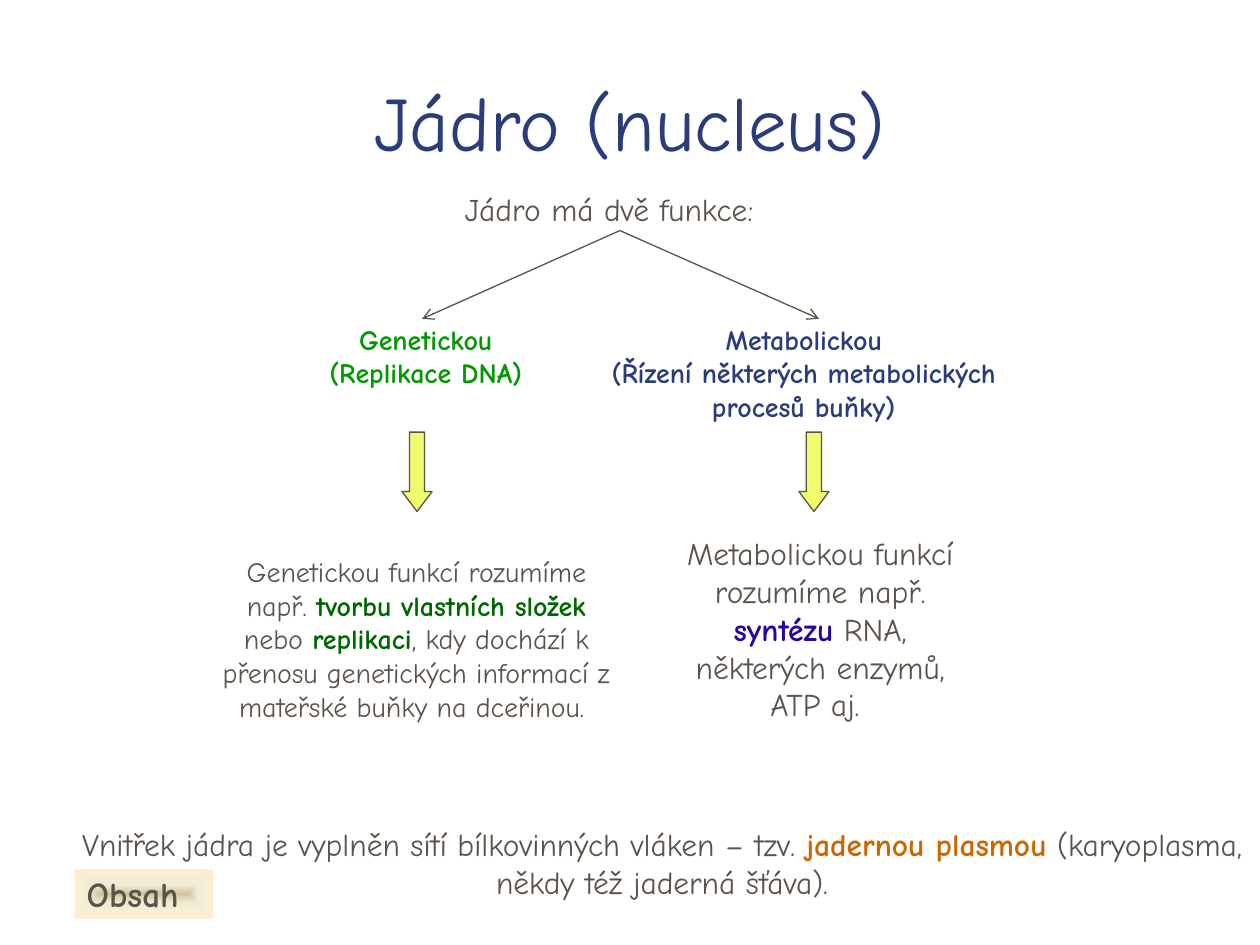
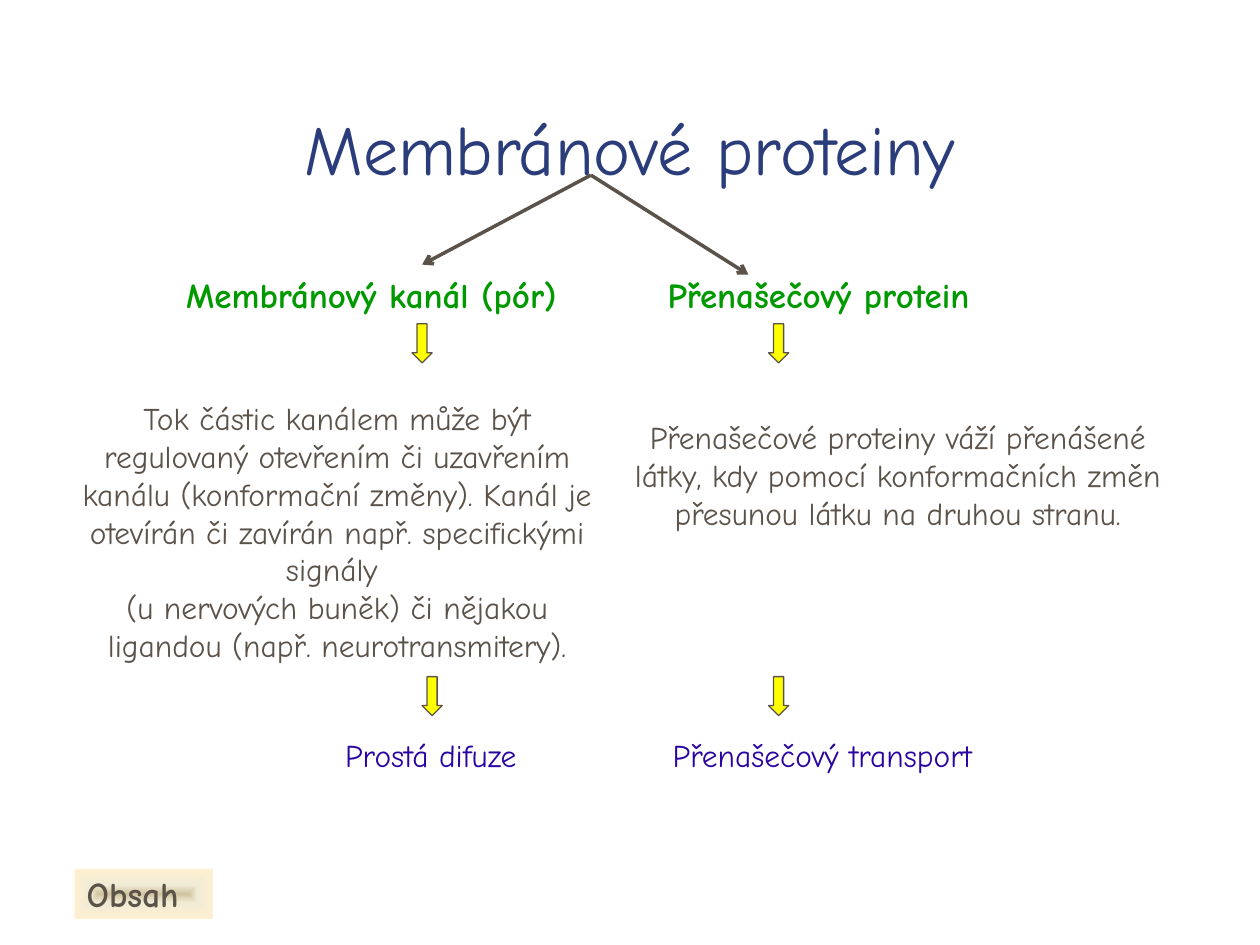
"""Build two biology slides: the cell nucleus and the membrane proteins."""
from dataclasses import dataclass
from typing import NamedTuple

from lxml import etree
from pptx import Presentation
from pptx.dml.color import RGBColor
from pptx.enum import shapes, text
from pptx.oxml import ns, parse_xml
from pptx.util import Inches, Pt


@dataclass(frozen=True)
class Theme:
    font: str = "Comic Neue"
    body: str = "5B5249"
    navy: str = "2A3D7A"
    green: str = "009900"
    dark_green: str = "006600"
    violet: str = "2904A0"
    orange: str = "CC6600"
    lime: str = "EEFC6E"
    yellow: str = "FFFF00"
    white: str = "FFFFFF"
    button_stops: tuple = ((0, "D1C39F"), (35, "F0EBD5"), (100, "FFEFD1"))
    small: int = 16
    normal: int = 18
    heading: int = 20
    title: int = 40
    big_title: int = 44
    thin: float = 0.75
    thick: float = 2


class Box(NamedTuple):
    left: float
    top: float
    width: float
    height: float


class Point(NamedTuple):
    x: float
    y: float


class Run(NamedTuple):
    text: str
    color: str = ""
    bold: bool = False


class ArrowStyle(NamedTuple):
    width: float
    height: float
    head: float
    fill: str


T = Theme()
CENTER = text.PP_ALIGN.CENTER
LEFT = text.PP_ALIGN.LEFT
TOP = text.MSO_ANCHOR.TOP
MIDDLE = text.MSO_ANCHOR.MIDDLE
BOTTOM = text.MSO_ANCHOR.BOTTOM
NUCLEUS_ARROW = ArrowStyle(0.24, 0.63, 0.66, T.lime)
PROTEIN_ARROW = ArrowStyle(0.16, 0.31, 0.5, T.yellow)


def rgb(color: str) -> RGBColor:
    """Turn a hex string into a colour."""
    return RGBColor.from_string(color)


def write(sp, paragraphs, *, size=T.normal, color=T.body, bold=False,
          align=CENTER, anchor=TOP, wrap=True, grow=True) -> None:
    """Fill a shape with paragraphs, each a string or a list of runs."""
    tf = sp.text_frame
    tf.word_wrap = wrap
    tf.vertical_anchor = anchor
    fit = text.MSO_AUTO_SIZE
    tf.auto_size = fit.SHAPE_TO_FIT_TEXT if grow else fit.NONE
    for i, runs in enumerate(paragraphs):
        p = tf.paragraphs[0] if i == 0 else tf.add_paragraph()
        p.alignment = align
        for run in [Run(runs)] if isinstance(runs, str) else runs:
            r = p.add_run()
            r.text = run.text
            r.font.name = T.font
            r.font.size = Pt(size)
            r.font.bold = bold or run.bold
            r.font.color.rgb = rgb(run.color or color)


def add_text(slide, box: Box, *paragraphs, **fmt):
    """Add a text box with formatted paragraphs."""
    sp = slide.shapes.add_textbox(*map(Inches, box))
    write(sp, paragraphs, **fmt)
    return sp


def add_title(slide, box: Box, title: str, size: int) -> None:
    """Add the slide title."""
    add_text(slide, box, title, size=size, color=T.navy, anchor=BOTTOM, grow=False)


def add_branches(slide, apex: Point, ends, weight: float) -> None:
    """Draw arrows from one apex to several ends."""
    for end in ends:
        line = slide.shapes.add_connector(
            shapes.MSO_CONNECTOR.STRAIGHT, *map(Inches, (*apex, *end)))
        line.line.color.rgb = rgb(T.body)
        line.line.width = Pt(weight)
        etree.SubElement(line.line._get_or_add_ln(), ns.qn("a:tailEnd"), type="arrow")
        etree.SubElement(line._element.spPr, ns.qn("a:effectLst"))


def add_down_arrow(slide, at: Point, style: ArrowStyle) -> None:
    """Draw a block arrow pointing down."""
    sp = slide.shapes.add_shape(shapes.MSO_SHAPE.DOWN_ARROW,
                                *map(Inches, (*at, style.width, style.height)))
    sp.adjustments[1] = style.head
    sp.shadow.inherit = False
    sp.fill.solid()
    sp.fill.fore_color.rgb = rgb(style.fill)
    sp.line.color.rgb = rgb(T.body)
    sp.line.width = Pt(T.thin)


def add_contents_button(slide) -> None:
    """Draw the contents button with its rectangular gradient."""
    sp = slide.shapes.add_shape(shapes.MSO_SHAPE.ACTION_BUTTON_CUSTOM,
                                *map(Inches, Box(0.59, 6.9, 1.1, 0.39)))
    sp.shadow.inherit = False
    sp.line.fill.background()
    sp.fill.solid()
    stops = "".join(f'<a:gs pos="{pos * 1000}"><a:srgbClr val="{color}"/></a:gs>'
                    for pos, color in T.button_stops)
    gradient = parse_xml(
        f'<a:gradFill {ns.nsdecls("a")} rotWithShape="1"><a:gsLst>{stops}</a:gsLst>'
        '<a:path path="rect"><a:fillToRect l="50000" t="50000" r="50000" b="50000"/>'
        '</a:path></a:gradFill>')
    spPr = sp._element.spPr
    spPr.replace(spPr.find(ns.qn("a:solidFill")), gradient)
    write(sp, ["Obsah"], size=T.heading, bold=True, align=LEFT,
          anchor=MIDDLE, wrap=False, grow=False)


def build_nucleus(slide) -> None:
    """Build the slide on the nucleus and its two functions."""
    note = add_text(slide, Box(0.51, 6.5, 9.49, 0.7), [
        Run("Vnitřek jádra je vyplněn sítí bílkovinných vláken – tzv. "),
        Run("jadernou plasmou", T.orange, True),
        Run(" (karyoplasma, někdy též jaderná šťáva).")])
    note.fill.solid()
    note.fill.fore_color.rgb = rgb(T.white)
    white = note._element.spPr.find(ns.qn("a:solidFill"))[0]
    etree.SubElement(white, ns.qn("a:alpha"), val="50000")

    add_title(slide, Box(0.75, 0.44, 8.5, 0.93), "Jádro (nucleus)", T.big_title)
    add_text(slide, Box(3.59, 1.46, 2.71, 0.4), "Jádro má dvě funkce:",
             align=LEFT, wrap=False)
    add_branches(slide, Point(4.92, 1.83), [Point(3.35, 2.53), Point(6.5, 2.53)], T.thin)
    add_text(slide, Box(2.4, 2.51, 1.96, 0.64), "Genetickou", "(Replikace DNA)",
             size=T.small, color=T.green, bold=True, wrap=False)
    add_text(slide, Box(4.53, 2.51, 3.7, 0.9), "Metabolickou",
             "(Řízení některých metabolických procesů buňky)",
             size=T.small, color=T.navy, bold=True)
    for x in (3.19, 6.34):
        add_down_arrow(slide, Point(x, 3.43), NUCLEUS_ARROW)
    add_text(slide, Box(5.32, 4.19, 2.38, 1.6), [
        Run("Metabolickou funkcí rozumíme např. "),
        Run("syntézu", T.violet, True),
        Run(" RNA, některých enzymů, ATP aj. ")])
    add_text(slide, Box(1.61, 4.22, 3.39, 1.7), [
        Run("Genetickou funkcí rozumíme např. "),
        Run("tvorbu vlastních složek ", T.dark_green, True),
        Run("nebo "),
        Run("replikaci", T.dark_green, True),
        Run(", kdy dochází k přenosu genetických informací "
            "z mateřské buňky na dceřinou. ")],
        size=T.small, anchor=MIDDLE)
    add_contents_button(slide)


def build_proteins(slide) -> None:
    """Build the slide on the two kinds of membrane proteins."""
    add_title(slide, Box(0.75, 0.3, 8.5, 1.25), "Membránové proteiny", T.title)
    add_branches(slide, Point(4.69, 1.39), [Point(3.35, 2.1), Point(5.94, 2.18)], T.thick)
    for box, kind in ((Box(1.38, 2.12, 3.4, 0.43), "Membránový kanál (pór)"),
                      (Box(5.2, 2.12, 2.87, 0.43), "Přenašečový protein")):
        add_text(slide, box, kind, size=T.heading, color=T.green, bold=True,
                 align=LEFT, wrap=False)
    for at in (Point(3.27, 2.57), Point(6.1, 2.57), Point(3.35, 5.37), Point(6.1, 5.37)):
        add_down_arrow(slide, at, PROTEIN_ARROW)
    add_text(slide, Box(4.84, 3.12, 4.57, 1.3),
             "Přenašečové proteiny váží přenášené látky, kdy pomocí konformačních "
             "změn přesunou látku na druhou stranu.", anchor=MIDDLE)
    add_text(slide, Box(0.43, 3.12, 4.49, 2.2),
             "Tok částic kanálem může být regulovaný otevřením či uzavřením kanálu "
             "(konformační změny). Kanál je otevírán či zavírán např. specifickými "
             "signály ",
             "(u nervových buněk) či nějakou ligandou (např. neurotransmitery).")
    for box, transport in ((Box(2.64, 5.79, 1.77, 0.4), "Prostá difuze"),
                           (Box(5.24, 5.79, 2.89, 0.4), "Přenašečový transport")):
        add_text(slide, box, transport, color=T.violet, align=LEFT, wrap=False)
    add_contents_button(slide)


def main() -> None:
    """Build and save the presentation."""
    prs = Presentation()
    prs.slide_width, prs.slide_height = Inches(10), Inches(7.5)
    for build in (build_nucleus, build_proteins):
        build(prs.slides.add_slide(prs.slide_layouts[6]))
    prs.save("out.pptx")


if __name__ == "__main__":
    main()
